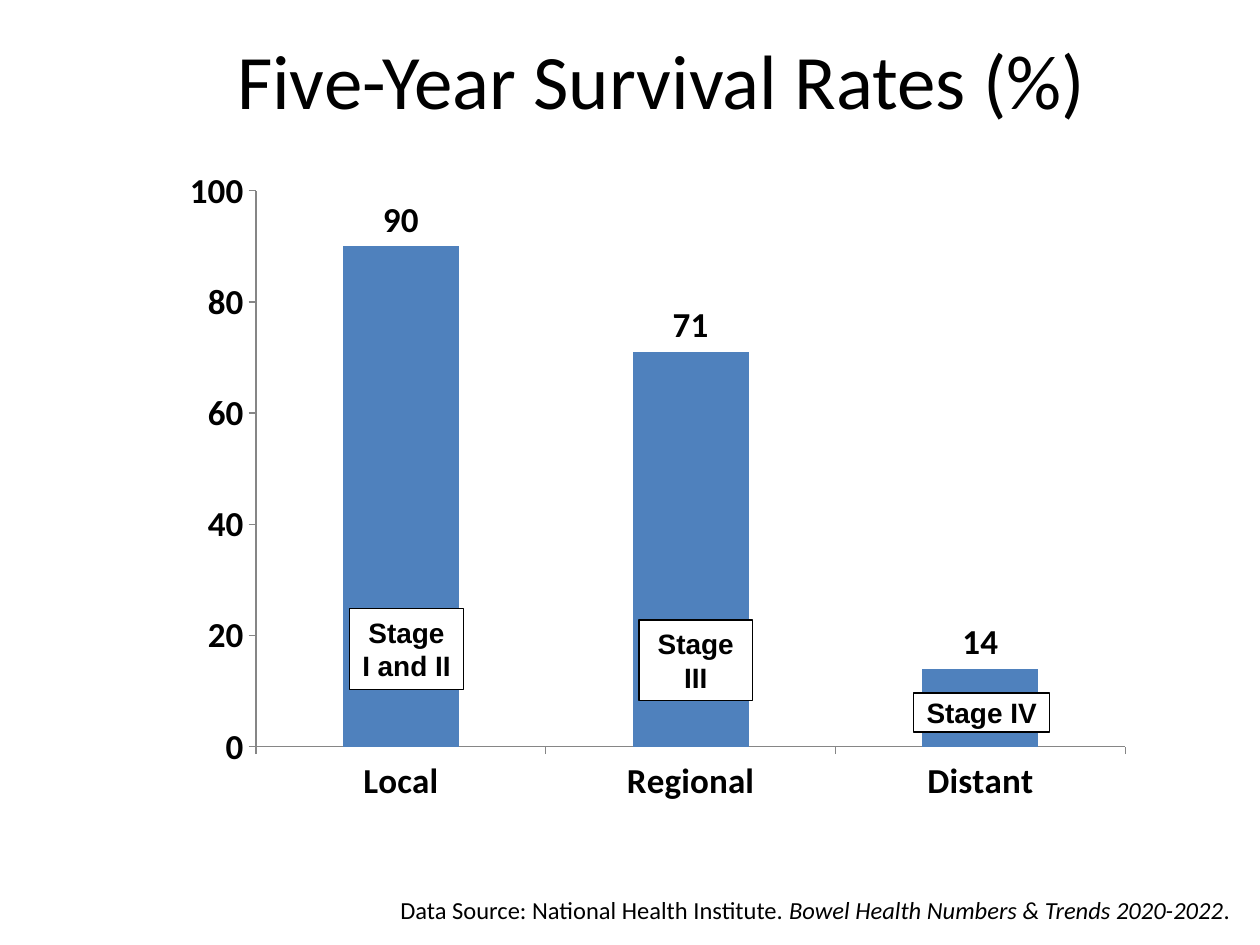
from lxml import etree
from pptx import Presentation
from pptx.chart.data import CategoryChartData
from pptx.dml.color import RGBColor
from pptx.enum.chart import XL_CHART_TYPE as Chart, XL_LABEL_POSITION as LabelPos, XL_TICK_MARK as Tick
from pptx.enum.shapes import MSO_SHAPE as Shape
from pptx.enum.text import MSO_ANCHOR as Anchor, PP_ALIGN as Align
from pptx.oxml.ns import qn
from pptx.util import Cm, Pt

# Content
TITLE = "Five-Year Survival Rates (%)"
SOURCE = [  # text, italic
    ("Data Source: National Health Institute. ", False),
    ("Bowel Health Numbers & Trends 2020-2022", True),
    (".", False),
]
RATES = {"Local": 90, "Regional": 71, "Distant": 14}
STAGES = [  # lines, box in cm, top and bottom inset in cm
    (["Stage", "I and II"], (7.04, 12.27, 2.31, 1.63), 0.13),
    (["Stage", "III"], (12.88, 12.5, 2.29, 1.63), 0.13),
    (["Stage IV"], (18.42, 13.97, 2.74, 0.79), 0.05),
]
PLOT = {"x": 0.09, "y": 0.05, "w": 0.89, "h": 0.84}  # shares of the chart frame
BLACK, WHITE, BLUE, GREY = "000000", "FFFFFF", "4F81BD", "868686"


def color(hex_code):
    return RGBColor.from_string(hex_code)


def set_font(font, size, name="Calibri", bold=False):
    font.size, font.name, font.bold = Pt(size), name, bold
    font.color.rgb = color(BLACK)


def add_text(slide, box, size):
    tf = slide.shapes.add_textbox(*map(Cm, box)).text_frame
    tf.word_wrap = True
    p = tf.paragraphs[0]
    set_font(p.font, size)
    return tf, p


def set_plot_layout(chart):
    area = chart._chartSpace.chart.plotArea
    for old in area.findall(qn("c:layout")):
        area.remove(old)
    layout = etree.Element(qn("c:layout"))
    manual = etree.SubElement(layout, qn("c:manualLayout"))
    settings = {"layoutTarget": "inner", "xMode": "edge", "yMode": "edge", **PLOT}
    for tag, val in settings.items():
        etree.SubElement(manual, qn(f"c:{tag}")).set("val", str(val))
    area.insert(0, layout)


def add_rates_chart(slide):
    data = CategoryChartData()
    data.categories = list(RATES)
    data.add_series("Series 1", list(RATES.values()))
    box = map(Cm, (3.39, 3.18, 19.69, 13.34))
    chart = slide.shapes.add_chart(Chart.COLUMN_CLUSTERED, *box, data).chart
    chart.has_legend = chart.has_title = False
    set_font(chart.font, 20, bold=True)
    set_plot_layout(chart)

    # Axes
    values = chart.value_axis
    values.minimum_scale, values.maximum_scale, values.major_unit = 0, 100, 20
    values.has_major_gridlines = True
    grid = values.major_gridlines.format.line
    grid.color.rgb, grid.width = color(WHITE), Pt(0.75)
    for axis in (values, chart.category_axis):
        axis.major_tick_mark, axis.minor_tick_mark = Tick.OUTSIDE, Tick.NONE
        axis.format.line.color.rgb = color(GREY)
        axis.format.line.width = Pt(0.75)

    # Columns and value labels
    plot = chart.plots[0]
    plot.gap_width, plot.vary_by_categories = 150, False
    fill = plot.series[0].format.fill
    fill.solid()
    fill.fore_color.rgb = color(BLUE)
    plot.has_data_labels = True
    labels = plot.data_labels
    labels.show_value, labels.position = True, LabelPos.OUTSIDE_END
    set_font(labels.font, 20, bold=True)


def add_stage(slide, lines, box, inset):
    sp = slide.shapes.add_shape(Shape.RECTANGLE, *map(Cm, box))
    sp.shadow.inherit = False
    sp.fill.solid()
    sp.fill.fore_color.rgb = color(WHITE)
    sp.line.color.rgb, sp.line.width = color(BLACK), Pt(0.75)
    tf = sp.text_frame
    tf.word_wrap, tf.vertical_anchor = False, Anchor.TOP
    tf.margin_top = tf.margin_bottom = Cm(inset)
    tf.text = "\n".join(lines)
    for p in tf.paragraphs:
        p.alignment = Align.CENTER
        set_font(p.font, 16, "Arial", bold=True)


prs = Presentation()
prs.slide_width, prs.slide_height = Cm(25.4), Cm(19.05)
s = prs.slides.add_slide(prs.slide_layouts[6])

# Title
tf, p = add_text(s, (1.91, 0, 22.86, 3.18), 44)
tf.vertical_anchor = Anchor.MIDDLE
p.text, p.alignment = TITLE, Align.CENTER

# Data source
tf, p = add_text(s, (7.82, 17.98, 21.16, 0.79), 14)
p.line_spacing = 0.9
for text, italic in SOURCE:
    r = p.add_run()
    r.text, r.font.italic = text, italic

# Chart with the stage boxes on its columns
add_rates_chart(s)
for stage in STAGES:
    add_stage(s, *stage)

prs.save("out.pptx")
